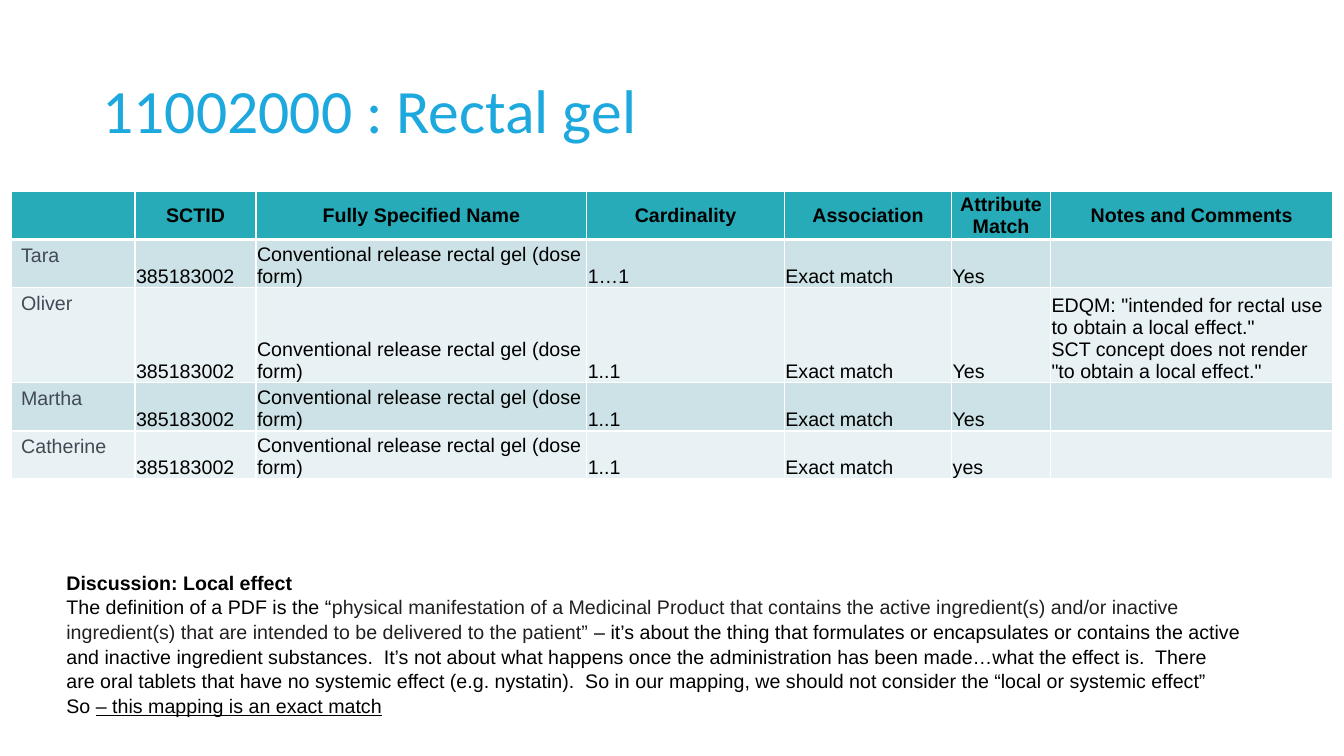
from dataclasses import dataclass

from lxml import etree
from pptx import Presentation, util as u
from pptx.dml import color
from pptx.enum import text
from pptx.oxml import ns

WHITE, BLACK = "FFFFFF", "000000"
TITLE_BLUE, NAME_GREY, QUOTE_GREY = "1DA8DE", "424A55", "231F20"
HEADER_FILL, BAND_FILLS = "27ABB8", ("CDE2E6", "E8F1F3")

HEADINGS = ("", "SCTID", "Fully Specified Name", "Cardinality", "Association",
            "Attribute Match", "Notes and Comments")
COLUMN_WIDTHS = (1.23, 1.2, 3.28, 1.96, 1.66, 0.98, 2.8)


@dataclass
class Review:
    reviewer: str
    cardinality: str = "1..1"
    attribute_match: str = "Yes"
    notes: str = ""
    height: float = 0.44

    def values(self) -> tuple:
        return (self.reviewer, "385183002",
                "Conventional release rectal gel (dose form)",
                self.cardinality, "Exact match", self.attribute_match, self.notes)


@dataclass
class Piece:
    words: str
    color: str = BLACK
    bold: bool = False
    underline: bool = False


REVIEWS = (
    Review("Tara", cardinality="1…1"),
    Review("Oliver", height=0.89,
           notes='EDQM: "intended for rectal use to obtain a local effect."\v'
                 'SCT concept does not render "to obtain a local effect."'),
    Review("Martha"),
    Review("Catherine", attribute_match="yes"),
)

DISCUSSION = (
    (Piece("Discussion: Local effect", bold=True),),
    (Piece("The definition of a PDF is the “"),
     Piece("physical manifestation of a Medicinal Product that contains the active "
           "ingredient(s) and/or inactive ingredient(s) that are intended to be "
           "delivered to the patient”", QUOTE_GREY),
     Piece(" – it’s about the thing that formulates or encapsulates or contains the "
           "active and inactive ingredient substances.  It’s not about what happens "
           "once the administration has been made…what the effect is.  There are oral "
           "tablets that have no systemic effect (e.g. nystatin).  So in our mapping, "
           "we should not consider the “local or systemic effect”")),
    (Piece("So "), Piece("– this mapping is an exact match", underline=True)),
)


def rgb(value: str) -> color.RGBColor:
    return color.RGBColor.from_string(value)


def style_font(font, value: str, size: float = 14, name: str = "Arial",
               bold: bool = False) -> None:
    font.name, font.size, font.bold = name, u.Pt(size), bold
    font.color.rgb = rgb(value)


def add_text_frame(slide, left: float, top: float, width: float, height: float):
    box = slide.shapes.add_textbox(*map(u.Inches, (left, top, width, height)))
    box.text_frame.word_wrap = True
    return box.text_frame


def set_borders(cell, bottom: float) -> None:
    properties = cell._tc.get_or_add_tcPr()
    for side, points in (("L", 1), ("R", 1), ("T", 1), ("B", bottom)):
        line = etree.SubElement(properties, ns.qn(f"a:ln{side}"), w=str(u.Pt(points)))
        fill = etree.SubElement(line, ns.qn("a:solidFill"))
        etree.SubElement(fill, ns.qn("a:srgbClr"), val=WHITE)


def fill_cell(cell, words: str, fill: str, header: bool, reviewer: bool) -> None:
    set_borders(cell, bottom=3 if header else 1)
    cell.fill.solid()
    cell.fill.fore_color.rgb = rgb(fill)
    if not words:
        return
    cell.text_frame.text = words
    if not reviewer:
        cell.margin_left = cell.margin_right = cell.margin_top = u.Inches(0.01)
        cell.margin_bottom = 0
        cell.vertical_anchor = (text.MSO_ANCHOR.MIDDLE if header
                                else text.MSO_ANCHOR.BOTTOM)
    paragraph = cell.text_frame.paragraphs[0]
    if header:
        paragraph.alignment = text.PP_ALIGN.CENTER
    for run in paragraph.runs:
        style_font(run.font, NAME_GREY if reviewer else BLACK, bold=header)


def add_title(slide) -> None:
    frame = add_text_frame(slide, 0.92, 0.4, 11.5, 1.45)
    frame.vertical_anchor = text.MSO_ANCHOR.MIDDLE
    frame.text = "11002000 : Rectal gel"
    paragraph = frame.paragraphs[0]
    paragraph.line_spacing = 0.9
    style_font(paragraph.runs[0].font, TITLE_BLUE, 44, "Calibri")


def add_review_table(slide) -> None:
    rows = [HEADINGS] + [review.values() for review in REVIEWS]
    heights = [0.44] + [review.height for review in REVIEWS]
    table = slide.shapes.add_table(
        len(rows), len(HEADINGS), u.Inches(0.11), u.Inches(1.9),
        u.Inches(sum(COLUMN_WIDTHS)), u.Inches(sum(heights))).table
    for column, width in zip(table.columns, COLUMN_WIDTHS):
        column.width = u.Inches(width)
    for row_index, (values, height) in enumerate(zip(rows, heights)):
        table.rows[row_index].height = u.Inches(height)
        header = row_index == 0
        fill = HEADER_FILL if header else BAND_FILLS[(row_index - 1) % 2]
        for column_index, words in enumerate(values):
            fill_cell(table.cell(row_index, column_index), words, fill, header,
                      reviewer=column_index == 0)


def add_discussion(slide) -> None:
    frame = add_text_frame(slide, 0.56, 5.6, 11.85, 1.99)
    for index, pieces in enumerate(DISCUSSION):
        paragraph = frame.add_paragraph() if index else frame.paragraphs[0]
        paragraph.line_spacing = 1.05
        for piece in pieces:
            run = paragraph.add_run()
            run.text = piece.words
            style_font(run.font, piece.color, bold=piece.bold)
            run.font.underline = piece.underline


def main() -> None:
    presentation = Presentation()
    presentation.slide_width = u.Inches(13.33)
    presentation.slide_height = u.Inches(7.5)
    slide = presentation.slides.add_slide(presentation.slide_layouts[6])
    add_title(slide)
    add_review_table(slide)
    add_discussion(slide)
    presentation.save("out.pptx")


if __name__ == "__main__":
    main()
